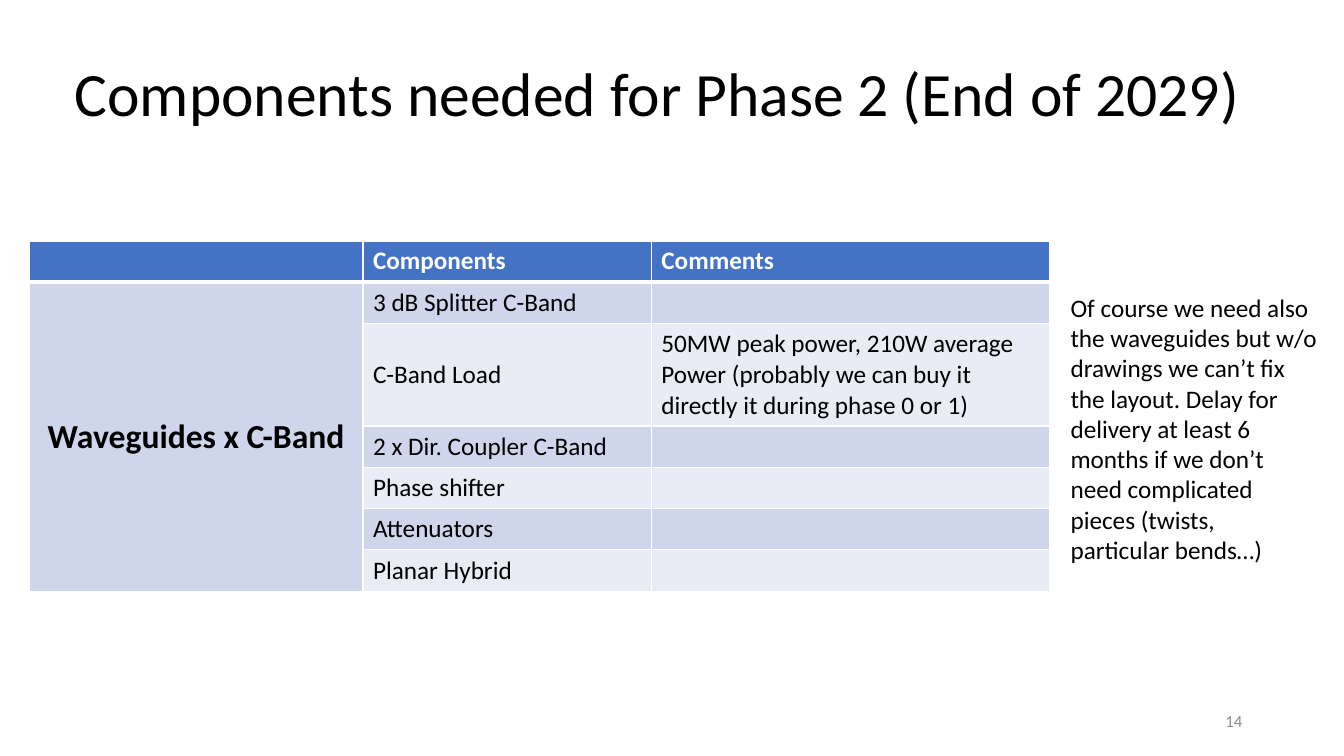
import pptx
import pptx.util
import pptx.dml.color
import pptx.enum.text
import pptx.oxml
import pptx.oxml.ns

Inches = pptx.util.Inches
RGBColor = pptx.dml.color.RGBColor
Align = pptx.enum.text.PP_ALIGN
Anchor = pptx.enum.text.MSO_ANCHOR

BLACK = RGBColor(0x00, 0x00, 0x00)
WHITE = RGBColor(0xFF, 0xFF, 0xFF)
GREY = RGBColor(0x8C, 0x8C, 0x8C)
HEADER_BLUE = RGBColor(0x44, 0x72, 0xC4)
BAND_DARK = RGBColor(0xCF, 0xD5, 0xEA)
BAND_LIGHT = RGBColor(0xE9, 0xEB, 0xF5)


def write(text_frame, text, size, color=BLACK, bold=False, align=Align.LEFT):
    paragraph = text_frame.paragraphs[0]
    paragraph.alignment = align
    run = paragraph.add_run()
    run.text = text
    run.font.name = "Calibri"
    run.font.size = pptx.util.Pt(size)
    run.font.bold = bold
    run.font.color.rgb = color
    return paragraph


def set_borders(cell, bottom_width):
    properties = cell._tc.get_or_add_tcPr()
    widths = {"lnL": 1, "lnR": 1, "lnT": 1, "lnB": bottom_width}
    for position, (side, width) in enumerate(widths.items()):
        line = pptx.oxml.parse_xml(
            f'<a:{side} {pptx.oxml.ns.nsdecls("a")} w="{pptx.util.Pt(width)}">'
            f'<a:solidFill><a:srgbClr val="{WHITE}"/></a:solidFill></a:{side}>')
        properties.insert(position, line)


presentation = pptx.Presentation()
presentation.slide_width = Inches(13.33)
presentation.slide_height = Inches(7.5)
slide = presentation.slides.add_slide(presentation.slide_layouts[5])

# Title
title = slide.shapes.title
title.left, title.top = Inches(0.64), Inches(0.23)
title.width, title.height = Inches(12.05), Inches(1.45)
title.text_frame.auto_size = pptx.enum.text.MSO_AUTO_SIZE.NONE
title.text_frame.vertical_anchor = Anchor.MIDDLE
write(title.text_frame, "Components needed for Phase 2 (End of 2029)", 44).line_spacing = 0.9

# Components table
rows = [
    ("", "Components", "Comments"),
    ("Waveguides x C-Band", "3 dB Splitter C-Band", ""),
    ("", "C-Band Load", "50MW peak power, 210W average Power "
     "(probably we can buy it directly it during phase 0 or 1)"),
    ("", "2 x Dir. Coupler C-Band", ""),
    ("", "Phase shifter", ""),
    ("", "Attenuators", ""),
    ("", "Planar Hybrid", ""),
]
table = slide.shapes.add_table(
    len(rows), 3, Inches(0.29), Inches(2.39), Inches(10.12), Inches(3.43)).table
for column, width in zip(table.columns, (3.31, 2.86, 3.95)):
    column.width = Inches(width)
for row in table.rows:
    row.height = Inches(0.41)
table.rows[2].height = Inches(1.01)

for row_index, texts in enumerate(rows):
    is_header = row_index == 0
    for column_index, text in enumerate(texts):
        cell = table.cell(row_index, column_index)
        is_group = column_index == 0 and not is_header
        cell.fill.solid()
        if is_header:
            cell.fill.fore_color.rgb = HEADER_BLUE
        elif is_group or row_index % 2:
            cell.fill.fore_color.rgb = BAND_DARK
        else:
            cell.fill.fore_color.rgb = BAND_LIGHT
        set_borders(cell, 3 if is_header else 1)
        cell.vertical_anchor = Anchor.TOP if is_header else Anchor.MIDDLE
        if text:
            write(cell.text_frame, text, 24 if is_group else 18,
                  WHITE if is_header else BLACK, is_header or is_group,
                  Align.CENTER if is_group else Align.LEFT)
table.cell(1, 0).merge(table.cell(len(rows) - 1, 0))

# Side note
note = slide.shapes.add_textbox(Inches(10.52), Inches(2.85), Inches(2.66), Inches(2.83))
note.text_frame.word_wrap = True
note.text_frame.auto_size = pptx.enum.text.MSO_AUTO_SIZE.SHAPE_TO_FIT_TEXT
write(note.text_frame,
      "Of course we need also the waveguides but w/o drawings we can’t fix the layout. "
      "Delay for delivery at least 6 months if we don’t need complicated pieces "
      "(twists, particular bends…)", 18)

# Slide number
number = slide.shapes.add_textbox(Inches(9.42), Inches(6.95), Inches(3), Inches(0.4))
number.text_frame.word_wrap = True
number.text_frame.vertical_anchor = Anchor.MIDDLE
write(number.text_frame, "14", 12, GREY, align=Align.RIGHT)

presentation.save("out.pptx")
